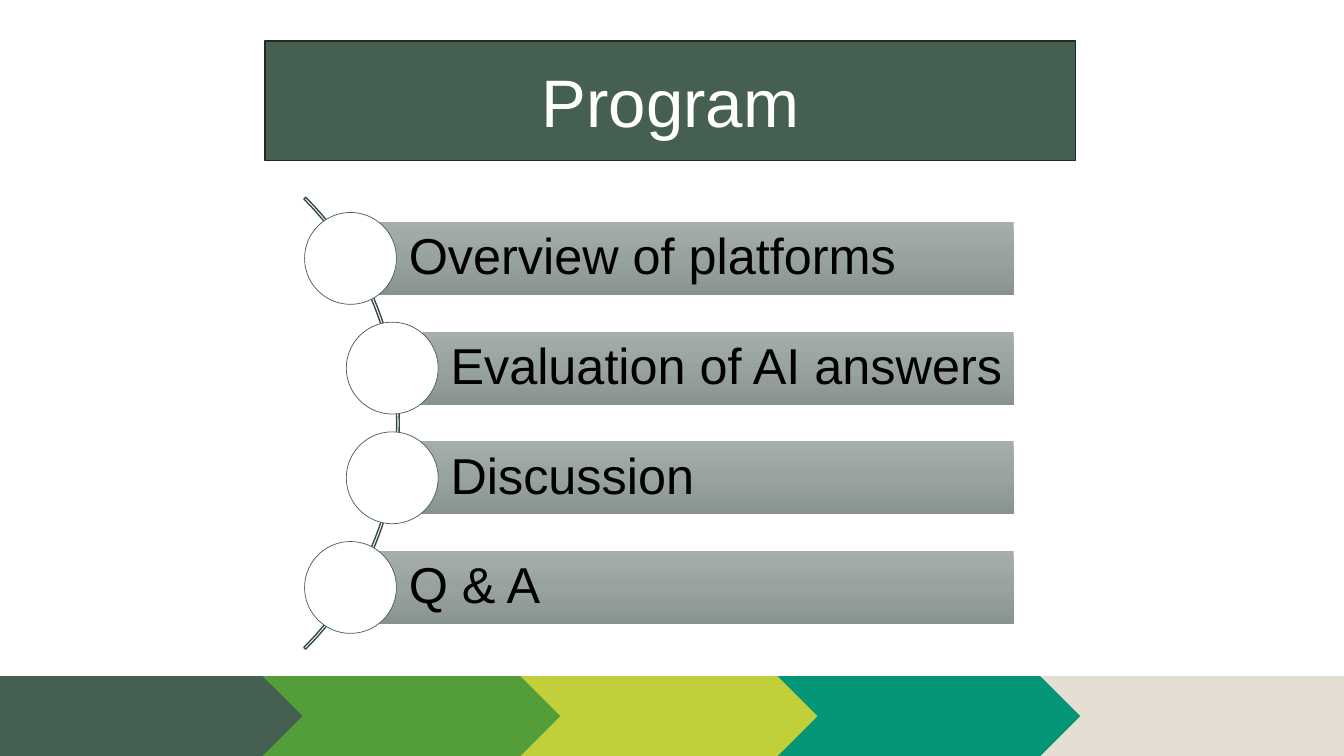
from copy import deepcopy

from pptx import Presentation
from pptx.dml.color import RGBColor
from pptx.enum.shapes import MSO_SHAPE
from pptx.enum.text import MSO_ANCHOR, MSO_AUTO_SIZE, PP_ALIGN
from pptx.oxml import parse_xml
from pptx.oxml.ns import nsdecls, qn
from pptx.util import Pt

RECT = MSO_SHAPE.RECTANGLE
PLATE = MSO_SHAPE.PENTAGON
ARC = MSO_SHAPE.BLOCK_ARC
OVAL = MSO_SHAPE.OVAL
MIDDLE = MSO_ANCHOR.MIDDLE
LEFT, CENTER = PP_ALIGN.LEFT, PP_ALIGN.CENTER
NO_FIT = MSO_AUTO_SIZE.NONE

WHITE = RGBColor(0xFF, 0xFF, 0xFF)
BLACK = RGBColor(0x00, 0x00, 0x00)
PINE = RGBColor(0x45, 0x5F, 0x51)
MOSS = RGBColor(0x37, 0x4C, 0x41)
EDGE = RGBColor(0x1E, 0x2A, 0x24)
GREEN = RGBColor(0x54, 0x9E, 0x39)
LIME = RGBColor(0xC0, 0xCF, 0x3A)
TEAL = RGBColor(0x02, 0x96, 0x76)
SAND = RGBColor(0xE3, 0xDE, 0xD1)
SHADES = [RGBColor(0xA6, 0xAE, 0xA9), RGBColor(0x99, 0xA3, 0x9D), RGBColor(0x87, 0x94, 0x8D)]


class Deck:
    font = "Arial"

    def __init__(self):
        self.prs = Presentation()
        self.prs.slide_width, self.prs.slide_height = Pt(960), Pt(540)
        self.slide = self.prs.slides.add_slide(self.prs.slide_layouts[5])

    def paint(self, shape, fill=None, line=None, width=1):
        if fill is None:
            shape.fill.background()
        else:
            shape.fill.solid()
            shape.fill.fore_color.rgb = fill
        if line is None:
            shape.line.fill.background()
        else:
            shape.line.color.rgb = line
            shape.line.width = Pt(width)

    def shape(self, kind, box, fill=None, line=None, width=1):
        shape = self.slide.shapes.add_shape(kind, *map(Pt, box))
        shape.shadow.inherit = False
        self.paint(shape, fill, line, width)
        return shape

    def label(self, shape, text, size, color, align):
        frame = shape.text_frame
        frame.text = text
        frame.word_wrap = True
        frame.auto_size = NO_FIT
        frame.vertical_anchor = MIDDLE
        para = frame.paragraphs[0]
        para.alignment = align
        para.font.name = self.font
        para.font.size = Pt(size)
        para.font.color.rgb = color
        return frame

    def title(self, text, box):
        title = self.slide.shapes.title
        title.left, title.top, title.width, title.height = map(Pt, box)
        title._element.spPr.append(parse_xml(
            f'<a:prstGeom {nsdecls("a")} prst="roundRect"><a:avLst/></a:prstGeom>'))
        self.paint(title, PINE, EDGE)
        self.label(title, text, 48, WHITE, CENTER)

    def blend(self, shape, colors):
        shape.fill.gradient()
        shape.fill.gradient_angle = 270
        stops = shape._element.spPr.find(".//" + qn("a:gsLst"))
        stops.insert(1, deepcopy(stops[0]))
        stops[1].set("pos", "50000")
        for stop, color in zip(shape.fill.gradient_stops, colors):
            stop.color.rgb = color

    def item(self, text, left, top):
        right, high, dot = 724, 52.2, 65.6
        bar = self.shape(RECT, (left, top, right - left, high))
        self.blend(bar, SHADES)
        frame = self.label(bar, text, 36, BLACK, LEFT)
        frame.margin_left, frame.margin_right = Pt(41.6), Pt(2)
        frame.paragraphs[0].line_spacing = 0.9
        self.shape(OVAL, (left - dot / 2, top + (high - dot) / 2, dot, dot), WHITE, PINE, 0.5)

    def arc(self, box):
        arc = self.shape(ARC, box, line=MOSS)
        for i, value in enumerate((189, 27, 0.004)):
            arc.adjustments[i] = value

    def band(self, parts):
        for kind, left, color in parts:
            self.shape(kind, (left, 483, 216, 57), color)


def main():
    deck = Deck()
    deck.band([(RECT, 744, SAND), (PLATE, 555.6, TEAL), (PLATE, 368, LIME),
               (PLATE, 184.2, GREEN), (PLATE, 0, PINE)])
    deck.title("Program", (189.4, 29.4, 579, 85.2))
    deck.arc((-171.4, 74, 456.6, 456.6))
    items = ["Overview of platforms", "Evaluation of AI answers", "Discussion", "Q & A"]
    for row, text in enumerate(items):
        left = 280.2 if row in (1, 2) else 250.4
        deck.item(text, left, 158.5 + 78.35 * row)
    deck.prs.save("out.pptx")


if __name__ == "__main__":
    main()
